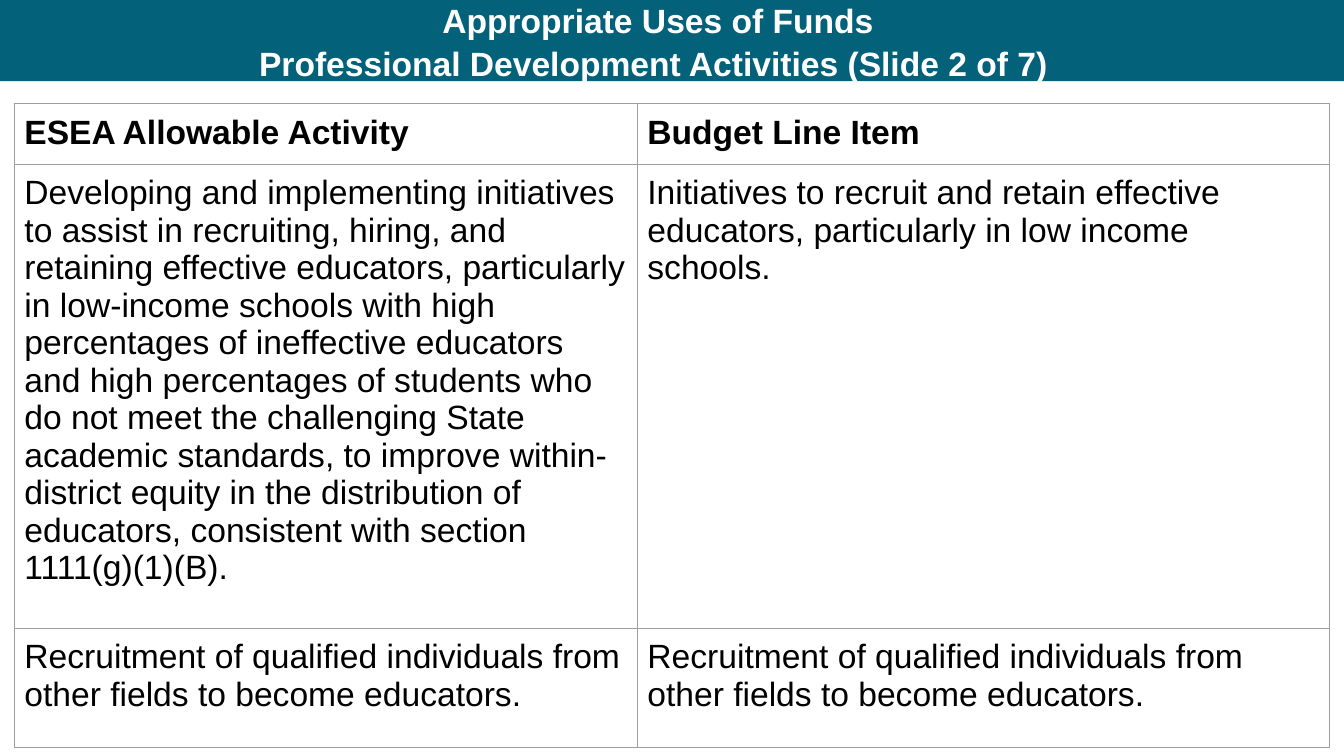
"""Builds a slide that matches allowable activities with budget line items."""
from dataclasses import dataclass

import pptx
import pptx.dml.color
import pptx.enum.shapes
import pptx.enum.text
import pptx.oxml
import pptx.oxml.ns
import pptx.util

Pt = pptx.util.Pt
RGB = pptx.dml.color.RGBColor.from_string


@dataclass(frozen=True)
class Theme:
    font: str = "Arial"
    size: float = 24
    banner: str = "03617A"
    paper: str = "FFFFFF"
    ink: str = "000000"
    rule: str = "9E9E9E"
    rule_width: float = 0.75
    inset: float = 7.2


THEME = Theme()
TITLE = ["Appropriate Uses of Funds",
         "Professional Development Activities (Slide 2 of 7) "]
COLUMN_WIDTHS = [445, 494.5]
ROW_HEIGHTS = [40.75, 309.25, 85]
RECRUITMENT = ("Recruitment of qualified individuals from other fields "
               "to become educators.")
ACTIVITIES = [
    ["ESEA Allowable Activity", "Budget Line Item"],
    ["Developing and implementing initiatives to assist in recruiting, hiring, "
     "and retaining effective educators, particularly in low-income schools "
     "with high percentages of ineffective educators and high percentages of "
     "students who do not meet the challenging State academic standards, to "
     "improve within-district equity in the distribution of educators, "
     "consistent with section 1111(g)(1)(B).",
     "Initiatives to recruit and retain effective educators, particularly in "
     "low income schools."],
    [RECRUITMENT, RECRUITMENT],
]


def write(frame, lines, color=THEME.ink, bold=False, align="LEFT", gap=0):
    frame.word_wrap = True
    for index, line in enumerate(lines):
        paragraph = frame.add_paragraph() if index else frame.paragraphs[0]
        paragraph.alignment = getattr(pptx.enum.text.PP_ALIGN, align)
        if index:
            paragraph.space_before = Pt(gap)
        run = paragraph.add_run()
        run.text = line
        run.font.name = THEME.font
        run.font.size = Pt(THEME.size)
        run.font.bold = bold
        run.font.color.rgb = RGB(color)


def add_banner(slide, width, height):
    banner = slide.shapes.add_shape(
        pptx.enum.shapes.MSO_SHAPE.RECTANGLE, 0, 0, width, height)
    banner.shadow.inherit = False
    banner.fill.solid()
    banner.fill.fore_color.rgb = RGB(THEME.banner)
    banner.line.fill.background()


def add_title(slide, left, top, width, height):
    frame = slide.shapes.add_textbox(left, top, width, height).text_frame
    frame.margin_top = frame.margin_bottom = 0
    frame.vertical_anchor = pptx.enum.text.MSO_ANCHOR.TOP
    write(frame, TITLE, color=THEME.paper, bold=True, align="CENTER", gap=1.8)


def rule_cell(cell):
    properties = cell._tc.get_or_add_tcPr()
    for position, side in enumerate(("lnL", "lnR", "lnT", "lnB")):
        properties.insert(position, pptx.oxml.parse_xml(
            f'<a:{side} {pptx.oxml.ns.nsdecls("a")} w="{Pt(THEME.rule_width)}">'
            f'<a:solidFill><a:srgbClr val="{THEME.rule}"/></a:solidFill>'
            f'</a:{side}>'))


def add_activity_table(slide, left, top):
    table = slide.shapes.add_table(
        len(ROW_HEIGHTS), len(COLUMN_WIDTHS), left, top,
        Pt(sum(COLUMN_WIDTHS)), Pt(sum(ROW_HEIGHTS))).table
    table.first_row = table.horz_banding = False
    for column, width in zip(table.columns, COLUMN_WIDTHS):
        column.width = Pt(width)
    for index, (row, height) in enumerate(zip(table.rows, ROW_HEIGHTS)):
        row.height = Pt(height)
        for cell, text in zip(row.cells, ACTIVITIES[index]):
            cell.margin_left = cell.margin_right = Pt(THEME.inset)
            cell.margin_top = cell.margin_bottom = Pt(THEME.inset)
            cell.fill.solid()
            cell.fill.fore_color.rgb = RGB(THEME.paper)
            rule_cell(cell)
            write(cell.text_frame, [text], bold=index == 0)


def main():
    deck = pptx.Presentation()
    deck.slide_width, deck.slide_height = Pt(960), Pt(540)
    slide = deck.slides.add_slide(deck.slide_layouts[6])
    add_banner(slide, deck.slide_width, Pt(58))
    add_title(slide, Pt(26.5), Pt(0), Pt(887), Pt(58))
    add_activity_table(slide, Pt(10.25), Pt(74.25))
    deck.save("out.pptx")


if __name__ == "__main__":
    main()
